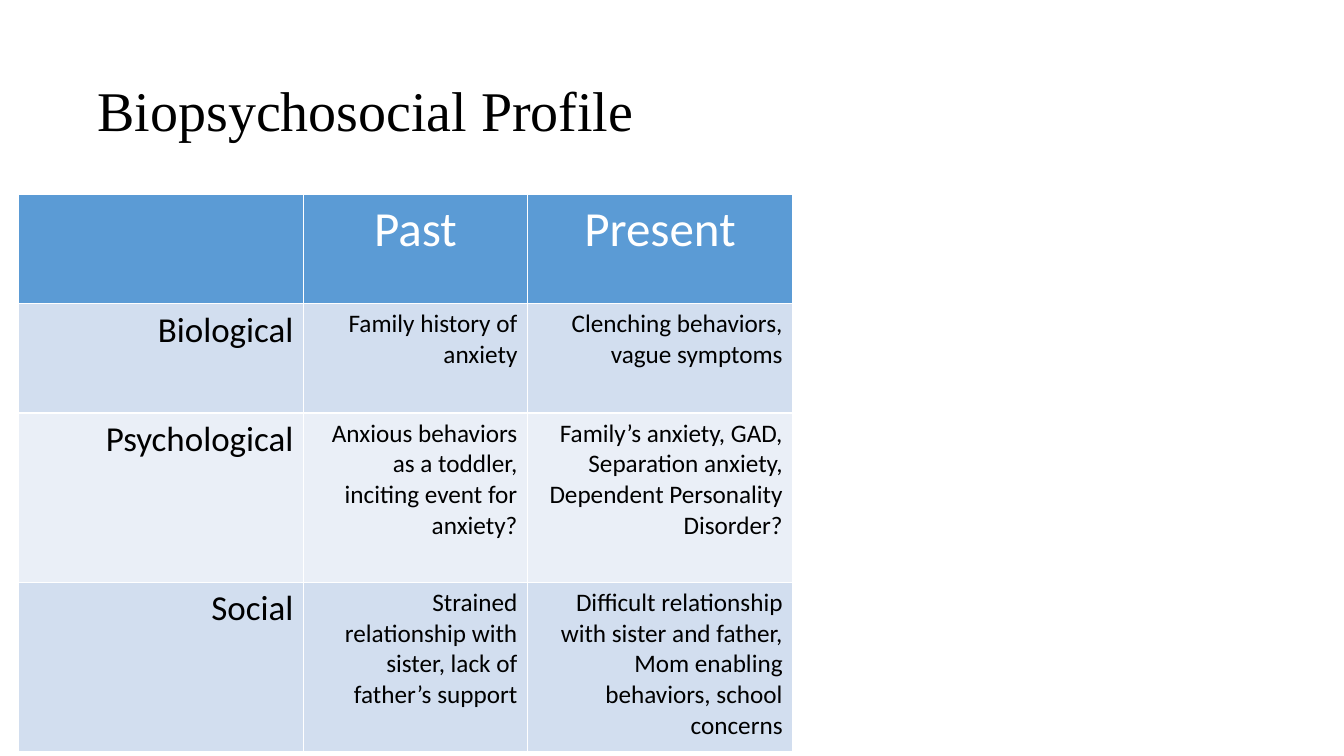
from dataclasses import dataclass

from lxml.etree import SubElement
from pptx import Presentation
from pptx.dml.color import RGBColor
from pptx.enum.text import MSO_AUTO_SIZE as AutoSize, MSO_ANCHOR as Anchor, PP_ALIGN as Align
from pptx.oxml.ns import qn
from pptx.util import Pt

WHITE = "FFFFFF"
BLACK = "000000"
HEADER_BLUE = "5B9BD5"
BAND_COLOURS = ("D2DEEF", "EAEFF7")
COLUMN_WIDTHS = (203.5, 160, 189.5)


@dataclass(frozen=True)
class ProfileRow:
    label: str
    past: str
    present: str
    height: float


HEADER = ProfileRow("", "Past", "Present", 78)
DOMAINS = (
    ProfileRow("Biological", "Family history of anxiety",
               "Clenching behaviors, vague symptoms", 78),
    ProfileRow("Psychological", "Anxious behaviors as a toddler, inciting event for anxiety?",
               "Family’s anxiety, GAD, Separation anxiety, Dependent Personality Disorder?", 121),
    ProfileRow("Social", "Strained relationship with sister, lack of father’s support",
               "Difficult relationship with sister and father, Mom enabling behaviors, "
               "school concerns", 121),
)


def colour(value: str) -> RGBColor:
    return RGBColor.from_string(value)


def format_font(paragraph, name: str, size: float, text_colour: str) -> None:
    font = paragraph.font
    font.name = name
    font.size = Pt(size)
    font.bold = False
    font.color.rgb = colour(text_colour)


def add_borders(cell) -> None:
    properties = cell._tc.get_or_add_tcPr()
    for side in ("lnL", "lnR", "lnT", "lnB"):
        line = SubElement(properties, qn(f"a:{side}"), w=str(Pt(1)))
        fill = SubElement(line, qn("a:solidFill"))
        SubElement(fill, qn("a:srgbClr"), val=WHITE)


def fill_cell(cell, text: str, size: float, text_colour: str, background: str,
              alignment: Align) -> None:
    add_borders(cell)
    cell.fill.solid()
    cell.fill.fore_color.rgb = colour(background)
    cell.text = text
    paragraph = cell.text_frame.paragraphs[0]
    paragraph.alignment = alignment
    format_font(paragraph, "Calibri", size, text_colour)


def add_title(slide, text: str) -> None:
    title = slide.shapes.title
    title.left, title.top, title.width, title.height = Pt(66), Pt(28.75), Pt(828), Pt(104.4)
    frame = title.text_frame
    frame.text = text
    frame.auto_size = AutoSize.NONE
    frame.vertical_anchor = Anchor.MIDDLE
    frame.margin_left = frame.margin_right = Pt(3.6)
    frame.margin_top = frame.margin_bottom = Pt(3.6)
    paragraph = frame.paragraphs[0]
    paragraph.alignment = Align.LEFT
    paragraph.line_spacing = 0.9
    format_font(paragraph, "Times New Roman", 40, BLACK)


def add_profile_table(slide) -> None:
    rows = (HEADER, *DOMAINS)
    height = sum(row.height for row in rows)
    table = slide.shapes.add_table(len(rows), len(COLUMN_WIDTHS), Pt(13.3), Pt(139),
                                   Pt(sum(COLUMN_WIDTHS)), Pt(height)).table
    for column, width in zip(table.columns, COLUMN_WIDTHS):
        column.width = Pt(width)
    for row_index, row in enumerate(rows):
        table.rows[row_index].height = Pt(row.height)
        for column_index, text in enumerate((row.label, row.past, row.present)):
            cell = table.cell(row_index, column_index)
            if row is HEADER:
                fill_cell(cell, text, 35, WHITE, HEADER_BLUE, Align.CENTER)
            else:
                size = 25 if column_index == 0 else 18
                band = BAND_COLOURS[(row_index - 1) % 2]
                fill_cell(cell, text, size, BLACK, band, Align.RIGHT)


def main() -> None:
    presentation = Presentation()
    presentation.slide_width = Pt(960)
    presentation.slide_height = Pt(540)
    slide = presentation.slides.add_slide(presentation.slide_layouts.get_by_name("Title Only"))
    add_title(slide, "Biopsychosocial Profile")
    add_profile_table(slide)
    presentation.save("out.pptx")


if __name__ == "__main__":
    main()
